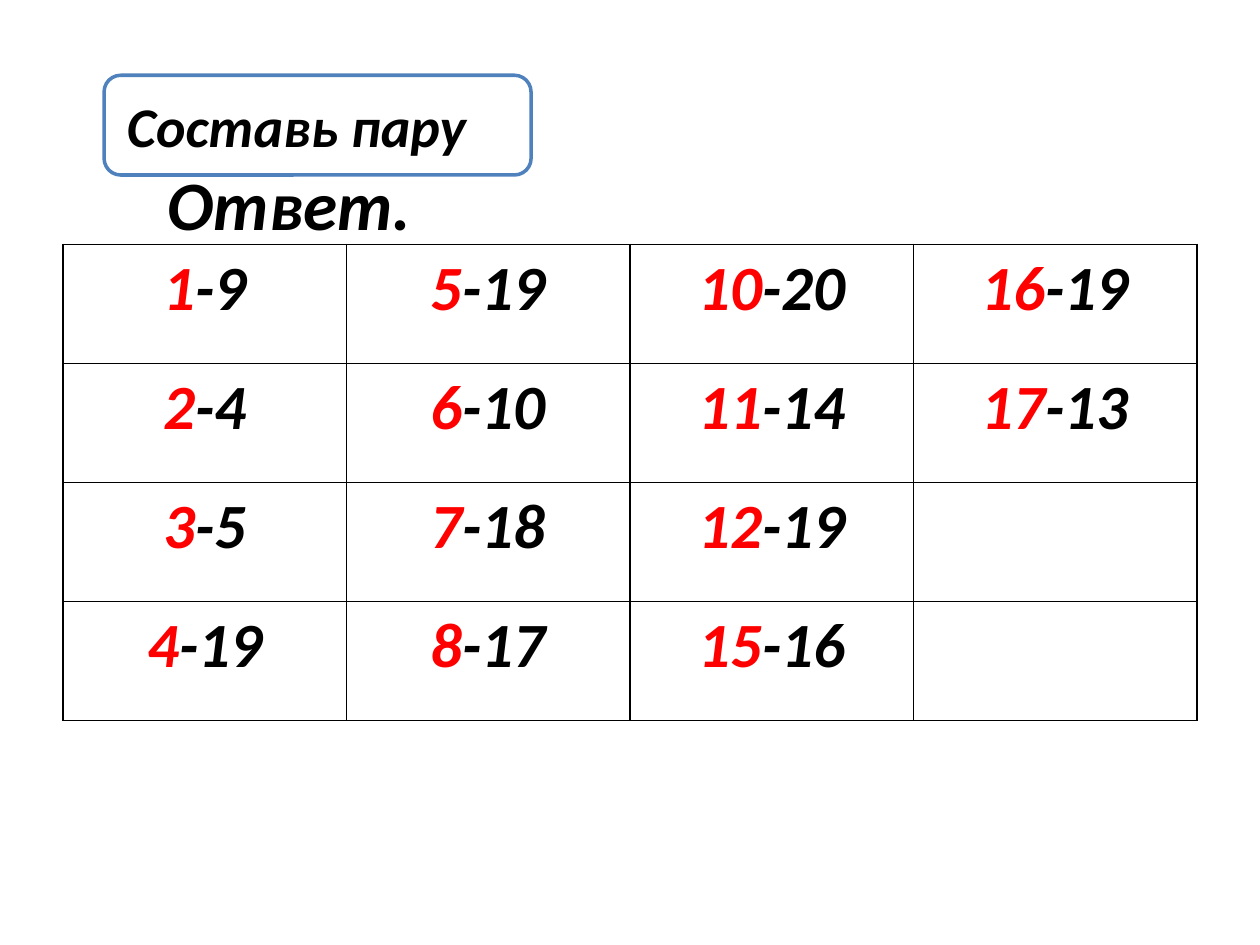
from lxml import etree
from pptx import Presentation
from pptx.dml.color import RGBColor
from pptx.enum import shapes, text
from pptx.oxml.ns import qn
from pptx.util import Pt

TASK = "Составь пару"
HEADING = "Ответ."
PAIRS = [
    [(1, 9), (5, 19), (10, 20), (16, 19)],
    [(2, 4), (6, 10), (11, 14), (17, 13)],
    [(3, 5), (7, 18), (12, 19), None],
    [(4, 19), (8, 17), (15, 16), None],
]
THEME = {
    "font": "Calibri", "ink": "000000", "accent": "FF0000",
    "paper": "FFFFFF", "frame": "4F81BD",
    "task": 32, "heading": 39.6, "pair": 36,
}
TABLE_LEFT, TABLE_TOP, COLUMN_WIDTH, ROW_HEIGHT = 36, 139.7, 162, 68


def color(name):
    return RGBColor.from_string(THEME[name])


def add_span(para, words, size, ink="ink"):
    span = para.add_run()
    span.text = words
    style = {"name": THEME["font"], "size": Pt(THEME[size]), "bold": True, "italic": True}
    for key, value in style.items():
        setattr(span.font, key, value)
    span.font.color.rgb = color(ink)


def add_label(page, words, size, place, **layout):
    frame = page.shapes.add_textbox(*map(Pt, place)).text_frame
    for key, value in {"word_wrap": True, **layout}.items():
        setattr(frame, key, value)
    add_span(frame.paragraphs[0], words, size)


def add_task_frame(page):
    box = page.shapes.add_shape(
        shapes.MSO_SHAPE.ROUNDED_RECTANGLE, Pt(59.5), Pt(43), Pt(244), Pt(57))
    box.shadow.inherit = False
    box.fill.solid()
    box.fill.fore_color.rgb = color("paper")
    box.line.color.rgb = color("frame")
    box.line.width = Pt(2)


def outline(cell):
    """Draw a thin line on all four sides; borders must precede the fill."""
    properties = cell._tc.get_or_add_tcPr()
    for index, side in enumerate(("a:lnL", "a:lnR", "a:lnT", "a:lnB")):
        line = etree.Element(qn(side), w=str(Pt(1)))
        fill = etree.SubElement(line, qn("a:solidFill"))
        etree.SubElement(fill, qn("a:srgbClr"), val=THEME["ink"])
        properties.insert(index, line)


def add_pairs(page):
    rows, columns = len(PAIRS), len(PAIRS[0])
    table = page.shapes.add_table(
        rows, columns, Pt(TABLE_LEFT), Pt(TABLE_TOP),
        Pt(columns * COLUMN_WIDTH), Pt(rows * ROW_HEIGHT)).table
    table.first_row = table.horz_banding = False
    for row, pairs in enumerate(PAIRS):
        for column, pair in enumerate(pairs):
            cell = table.cell(row, column)
            cell.fill.background()
            outline(cell)
            if pair:
                para = cell.text_frame.paragraphs[0]
                para.alignment = text.PP_ALIGN.CENTER
                add_span(para, str(pair[0]), "pair", "accent")
                add_span(para, f"-{pair[1]}", "pair")


def main():
    deck = Presentation()
    deck.slide_width, deck.slide_height = Pt(720), Pt(540)
    page = deck.slides.add_slide(deck.slide_layouts[6])
    add_task_frame(page)
    add_label(page, TASK, "task", (65.5, 49, 249, 46))
    add_label(page, HEADING, "heading", (36, 21.6, 648, 118), margin_left=Pt(59.5),
              margin_bottom=0, vertical_anchor=text.MSO_ANCHOR.BOTTOM)
    add_pairs(page)
    deck.save("out.pptx")


if __name__ == "__main__":
    main()
